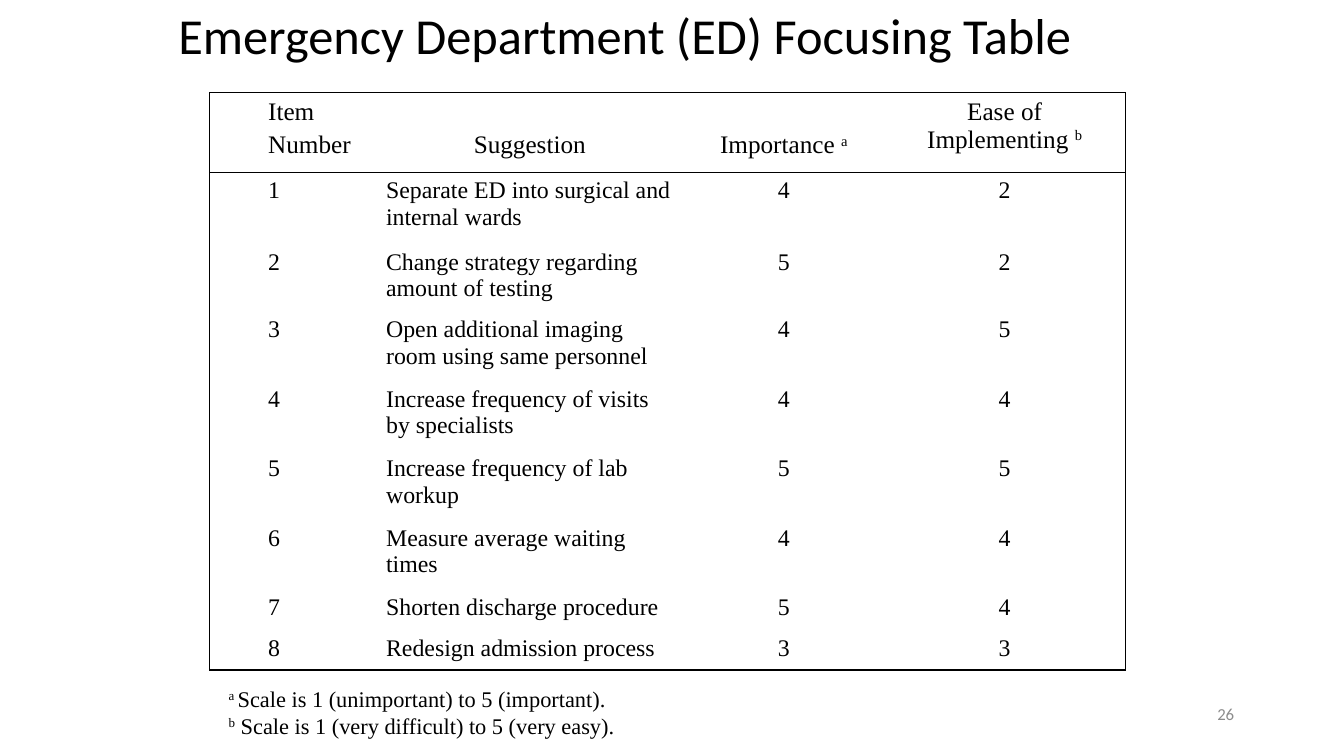
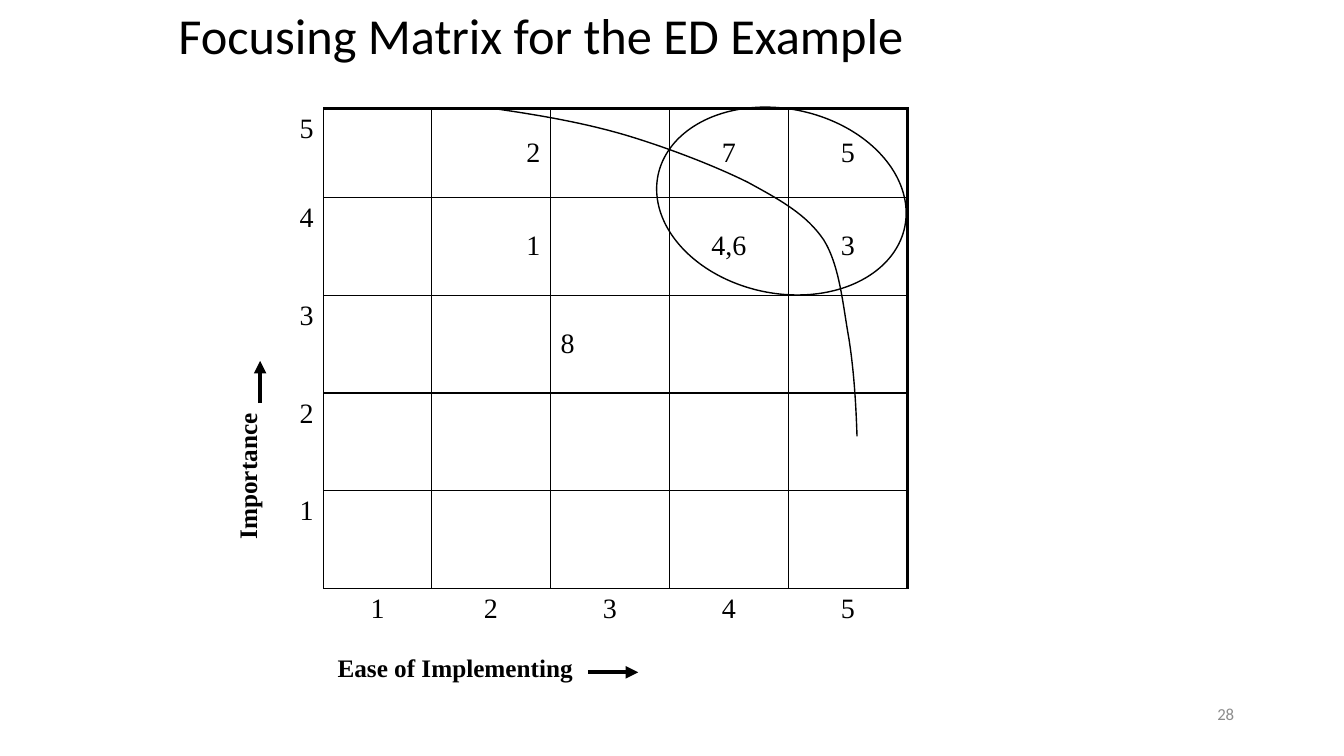
from lxml.etree import SubElement
from pptx import Presentation
from pptx.dml.color import RGBColor
from pptx.enum.shapes import MSO_CONNECTOR, MSO_SHAPE
from pptx.enum.text import MSO_ANCHOR, PP_ALIGN
from pptx.oxml.ns import qn
from pptx.util import Inches, Pt

BLACK, GREY = "000000", "8C8C8C"
SANS, SERIF = "Calibri", "Times New Roman"
LEFT, CENTER, RIGHT = PP_ALIGN.LEFT, PP_ALIGN.CENTER, PP_ALIGN.RIGHT
TOP, MIDDLE = MSO_ANCHOR.TOP, MSO_ANCHOR.MIDDLE


def write(tf, paragraphs, size, align=LEFT, font=SERIF, color=BLACK, bold=False, before=0, spacing=1):
    tf.word_wrap = True
    for i, runs in enumerate(paragraphs):
        p = tf.add_paragraph() if i else tf.paragraphs[0]
        p.alignment = align
        p.line_spacing = spacing
        if i:
            p.space_before = Pt(before)
        for text in runs:
            r = p.add_run()
            r.text = text.lstrip("^")
            r.font.size = Pt(size)
            r.font.name = font
            r.font.bold = bold
            r.font.color.rgb = RGBColor.from_string(color)
            if text.startswith("^"):
                r.font._element.set("baseline", "30000")


def style_cell(cell, left=0, right=0, top=0, bottom=0):
    cell.fill.background()
    tcPr = cell._tc.get_or_add_tcPr()
    sides = (("a:lnL", left), ("a:lnR", right), ("a:lnT", top), ("a:lnB", bottom))
    for i, (tag, width) in enumerate(sides):
        ln = SubElement(tcPr, qn(tag), w=str(Pt(width)))
        if width:
            fill = SubElement(ln, qn("a:solidFill"))
            SubElement(fill, qn("a:srgbClr"), val=BLACK)
        else:
            SubElement(ln, qn("a:noFill"))
        tcPr.insert(i, ln)


prs = Presentation()
prs.slide_width, prs.slide_height = Inches(13.33), Inches(7.5)

slides = []
for title, number in (("Emergency Department (ED) Focusing Table", "26"),
                      ("Focusing Matrix for the ED Example", "28")):
    s = prs.slides.add_slide(prs.slide_layouts[6])
    tf = s.shapes.add_textbox(Inches(9.56), Inches(6.83), Inches(2.78), Inches(0.5)).text_frame
    tf.vertical_anchor = MIDDLE
    write(tf, [[number]], 12, RIGHT, SANS, GREY)
    tf = s.shapes.add_textbox(Inches(1.67), Inches(-0.25), Inches(10), Inches(1.25)).text_frame
    tf.vertical_anchor = MIDDLE
    write(tf, [[title]], 36, font=SANS, spacing=0.9)
    slides.append(s)
table_slide, matrix_slide = slides

header = [
    ([["Item"], ["Number"]], LEFT, 0.05),
    ([["Suggestion"]], CENTER, 0.38),
    ([["Importance ", "^a"]], CENTER, 0.38),
    ([["Ease of Implementing ", "^b"]], CENTER, 0.05),
]
suggestions = [
    ("Separate ED into surgical and internal wards", 4, 2),
    ("Change strategy regarding amount of testing", 5, 2),
    ("Open additional imaging room using same personnel", 4, 5),
    ("Increase frequency of visits by specialists", 4, 4),
    ("Increase frequency of lab workup", 5, 5),
    ("Measure average waiting times", 4, 4),
    ("Shorten discharge procedure", 5, 4),
    ("Redesign admission process", 3, 3),
]
importance_labels = ["5", "4", "3", "2", "1"]
ease_labels = ["1", "2", "3", "4", "5"]
items = {(0, 2): ("2", RIGHT), (0, 4): ("7", CENTER), (0, 5): ("5", CENTER),
         (1, 2): ("1", RIGHT), (1, 4): ("4,6", CENTER), (1, 5): ("3", CENTER),
         (2, 3): ("8", LEFT)}

tables = []
for s, x, y, cols, rows in (
    (table_slide, 2.08, 0.92, [0.48, 1.17, 3.05, 1.99, 2.39], [0.79, 0.71, 0.6] + [0.69] * 4 + [0.4] * 2),
    (matrix_slide, 2.67, 1.08, [0.54, 1.07] + [1.18] * 4, [0.88] + [0.97] * 5),
):
    tbl = s.shapes.add_table(len(rows), len(cols), Inches(x), Inches(y),
                             Inches(sum(cols)), Inches(sum(rows))).table
    tbl.first_row = tbl.horz_banding = False
    for col, width in zip(tbl.columns, cols):
        col.width = Inches(width)
    for row, height in zip(tbl.rows, rows):
        row.height = Inches(height)
    tables.append(tbl)
focus_table, matrix = tables

for row in range(9):
    for col in range(5):
        style_cell(focus_table.cell(row, col), left=int(col == 0), right=int(col == 4),
                   top=int(row < 2), bottom=int(row in (0, 8)))
for col, (paragraphs, align, margin) in enumerate(header, 1):
    cell = focus_table.cell(0, col)
    cell.margin_top = Inches(margin)
    write(cell.text_frame, paragraphs, 18, align, before=3.6)
for row, (suggestion, importance, ease) in enumerate(suggestions, 1):
    values = ((row, LEFT), (suggestion, LEFT), (importance, CENTER), (ease, CENTER))
    for col, (value, align) in enumerate(values, 1):
        write(focus_table.cell(row, col).text_frame, [[str(value)]], 17, align)

for row in range(6):
    for col in range(6):
        cell = matrix.cell(row, col)
        text, align, anchor = "", LEFT, TOP
        if row == 5:
            style_cell(cell, top=int(col > 0))
            if col:
                text, align = ease_labels[col - 1], CENTER
        elif col == 0:
            style_cell(cell, right=1)
            text, align = importance_labels[row], RIGHT
        else:
            style_cell(cell, 1, 1 if col < 5 else 2.25, 1 if row else 2.25, 1)
            text, align = items.get((row, col), ("", LEFT))
            anchor = MIDDLE
        cell.vertical_anchor = anchor
        if text:
            write(cell.text_frame, [[text]], 20, align)

notes = [["^a ", "Scale is 1 (unimportant) to 5 (important)."],
         ["^b", " Scale is 1 (very difficult) to 5 (very easy)."]]
for s, x, y, w, h, angle, paragraphs, size, bold in (
    (table_slide, 2.17, 6.75, 6.34, 0.94, 0, notes, 16, False),
    (matrix_slide, 3.25, 6.42, 6.34, 0.67, 0, [["Ease of Implementing"]], 18, True),
    (matrix_slide, 0.69, 3.39, 3.62, 0.5, 270, [["Importance"]], 18, True),
):
    sp = s.shapes.add_textbox(Inches(x), Inches(y), Inches(w), Inches(h))
    sp.rotation = angle
    write(sp.text_frame, paragraphs, size, bold=bold)

for x1, y1, x2, y2 in ((5.83, 6.67, 6.33, 6.67), (2.58, 4, 2.58, 3.58)):
    arrow = matrix_slide.shapes.add_connector(MSO_CONNECTOR.STRAIGHT, Inches(x1), Inches(y1),
                                              Inches(x2), Inches(y2))
    arrow.line.color.rgb = RGBColor.from_string(BLACK)
    arrow.line.width = Pt(3)
    SubElement(arrow.line._get_or_add_ln(), qn("a:tailEnd"), type="triangle")
    SubElement(arrow._element.spPr, qn("a:effectLst"))

ellipse = matrix_slide.shapes.add_shape(MSO_SHAPE.OVAL, Inches(6.5), Inches(1.08), Inches(2.5), Inches(1.83))
ellipse.rotation = 12

curve_points = [(5.33, 1.14), (5.75, 1.21), (6.17, 1.33),
                (6.58, 1.45), (7.08, 1.64), (7.42, 1.81),
                (7.75, 1.99), (8, 2.13), (8.17, 2.38),
                (8.33, 2.64), (8.36, 3.03), (8.42, 3.36),
                (8.47, 3.68), (8.49, 4.01), (8.5, 4.33)]
builder = matrix_slide.shapes.build_freeform(Inches(4.92), Inches(1.08))
builder.add_line_segments([(Inches(x), Inches(y)) for x, y in curve_points], close=False)
curve = builder.convert_to_shape()
segments = list(curve._element.iter(qn("a:lnTo")))
for i in range(0, len(segments), 3):
    first, *others = segments[i:i + 3]
    first.tag = qn("a:cubicBezTo")
    for segment in others:
        first.append(segment[0])
        segment.getparent().remove(segment)

for sp in (ellipse, curve):
    sp.shadow.inherit = False
    sp.fill.background()
    sp.line.color.rgb = RGBColor.from_string(BLACK)
    sp.line.width = Pt(1)

prs.save("out.pptx")
